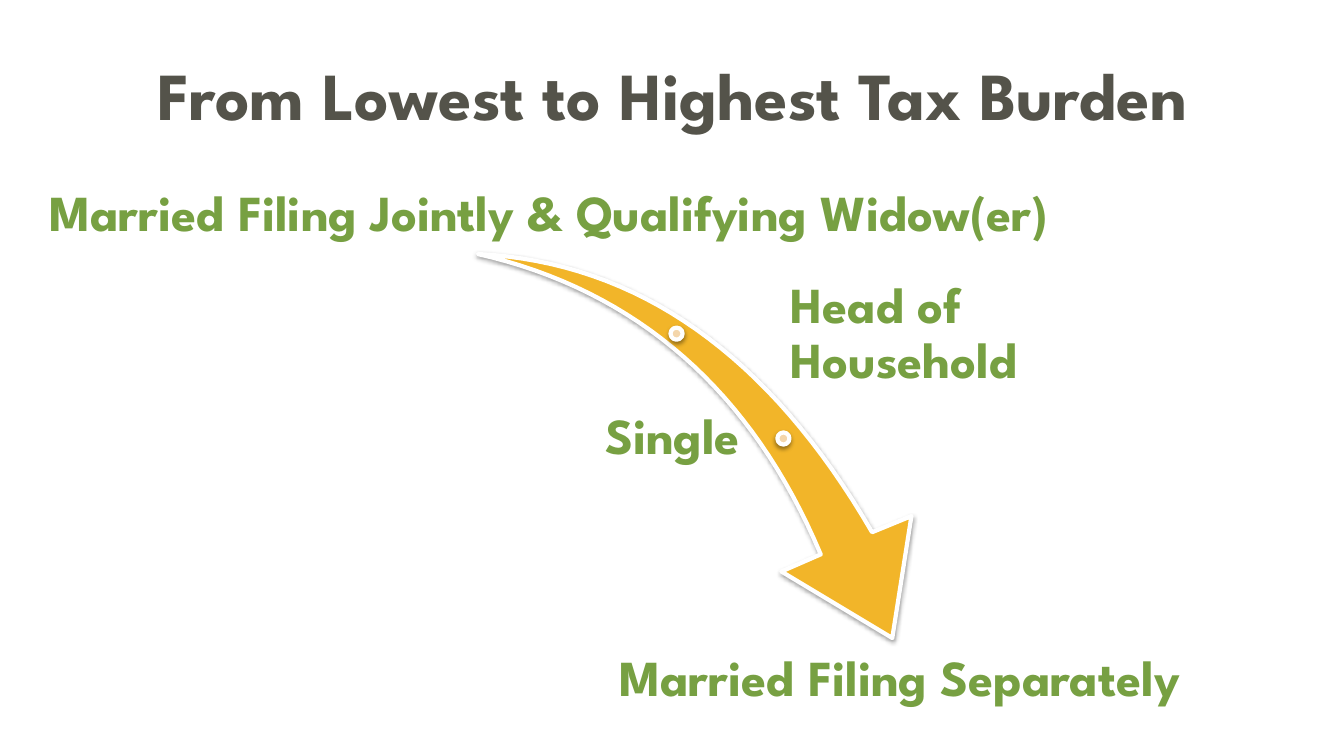
from lxml import etree
from pptx import Presentation
from pptx import util as u
from pptx.dml.color import RGBColor
from pptx.enum import shapes, text
from pptx.oxml import ns

GREY = RGBColor(0x54, 0x53, 0x4A)
GREEN = RGBColor(0x77, 0xA0, 0x42)
GOLD = RGBColor(0xF2, 0xB5, 0x29)
SAND = RGBColor(0xF4, 0xD6, 0xAB)
WHITE = RGBColor(0xFF, 0xFF, 0xFF)

LEFT, CENTER, RIGHT = text.PP_ALIGN.LEFT, text.PP_ALIGN.CENTER, text.PP_ALIGN.RIGHT
TOP, MIDDLE, BOTTOM = text.MSO_ANCHOR.TOP, text.MSO_ANCHOR.MIDDLE, text.MSO_ANCHOR.BOTTOM


def curve(start, pull_out, pull_in, end, steps=32):
    points = []
    for step in range(1, steps + 1):
        t = step / steps
        weights = ((1 - t) ** 3, 3 * t * (1 - t) ** 2, 3 * t ** 2 * (1 - t), t ** 3)
        corners = (start, pull_out, pull_in, end)
        points.append(tuple(sum(w * c[axis] for w, c in zip(weights, corners)) for axis in (0, 1)))
    return points


class Slide:
    font = "League Spartan"
    outline = u.Pt(3)

    def __init__(self, deck):
        self.page = deck.slides.add_slide(deck.slide_layouts[6])

    def label(self, words, left, top, width, height, align=CENTER, anchor=MIDDLE,
              size=36, color=GREEN, spacing=0.9, inset=0.05):
        box = self.page.shapes.add_textbox(*map(u.Inches, (left, top, width, height)))
        frame = box.text_frame
        frame.word_wrap = True
        frame.vertical_anchor = anchor
        frame.margin_left = frame.margin_right = u.Inches(inset)
        frame.margin_top = frame.margin_bottom = u.Inches(0.05)
        para = frame.paragraphs[0]
        para.alignment = align
        para.line_spacing = spacing
        span = para.add_run()
        span.text = words
        span.font.name = self.font
        span.font.size = u.Pt(size)
        span.font.bold = True
        span.font.color.rgb = color

    def paint(self, shape, color):
        shape.fill.solid()
        shape.fill.fore_color.rgb = color
        shape.line.color.rgb = WHITE
        shape.line.width = self.outline
        shape.shadow.inherit = False
        effects = shape._element.spPr.find(ns.qn("a:effectLst"))
        shadow = etree.SubElement(effects, ns.qn("a:outerShdw"), blurRad=str(u.Pt(3.1)),
                                  dist=str(u.Pt(1.6)), dir="5400000", rotWithShape="0")
        shade = etree.SubElement(shadow, ns.qn("a:srgbClr"), val="000000")
        etree.SubElement(shade, ns.qn("a:alpha"), val="38000")

    def outline_shape(self, points, color):
        corners = [(u.Inches(x), u.Inches(y)) for x, y in points]
        builder = self.page.shapes.build_freeform(*corners[0], scale=1.0)
        builder.add_line_segments(corners[1:], close=True)
        self.paint(builder.convert_to_shape(), color)

    def dot(self, left, top, size=0.12):
        place = map(u.Inches, (left, top, size, size))
        self.paint(self.page.shapes.add_shape(shapes.MSO_SHAPE.OVAL, *place), SAND)


def main():
    deck = Presentation()
    deck.slide_width, deck.slide_height = u.Inches(13.33), u.Inches(7.5)
    slide = Slide(deck)

    slide.label("From Lowest to Highest Tax Burden", 0.67, 0.3, 12, 1.25,
                size=48, color=GREY, spacing=1.0, inset=0.1)

    tail = (4.74, 2.52)
    head = [(9.04, 5.12), (8.85, 6.33), (7.75, 5.67), (8.14, 5.5)]
    upper_edge = curve(tail, (6.33, 2.6), (7.63, 3.52), (8.65, 5.28))
    lower_edge = curve(head[-1], (7.46, 3.88), (6.32, 2.88), tail)
    slide.outline_shape([tail] + upper_edge + head + lower_edge[:-1], GOLD)
    for left, top in ((6.65, 3.25), (7.71, 4.29)):
        slide.dot(left, top)

    slide.label("Married Filing Jointly & Qualifying Widow(er)", 0.36, 1.55, 10.17, 0.9, anchor=BOTTOM)
    slide.label("Head of Household", 7.79, 2.87, 4.14, 0.9, align=LEFT)
    slide.label("Single", 4.31, 3.9, 3.08, 0.9, align=RIGHT)
    slide.label("Married Filing Separately", 4.88, 6.43, 8.09, 0.53, anchor=TOP)

    deck.save("out.pptx")


if __name__ == "__main__":
    main()
